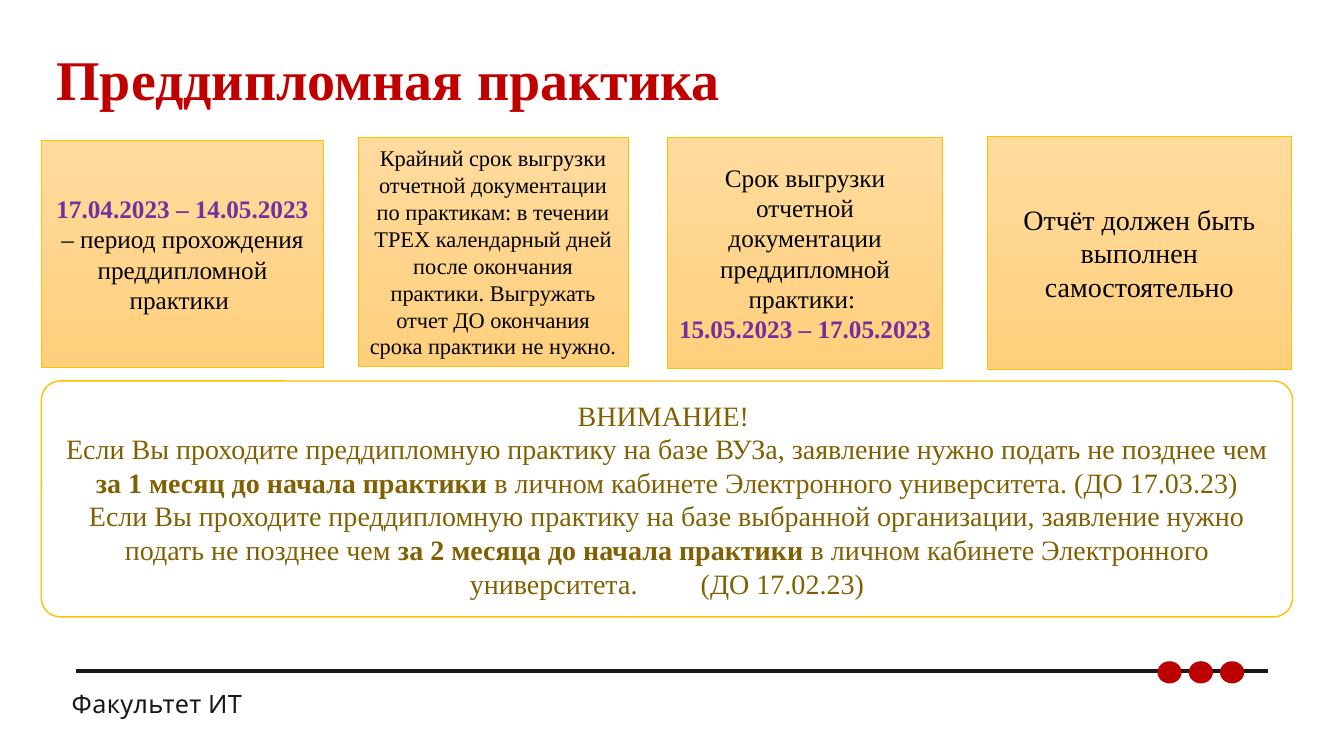
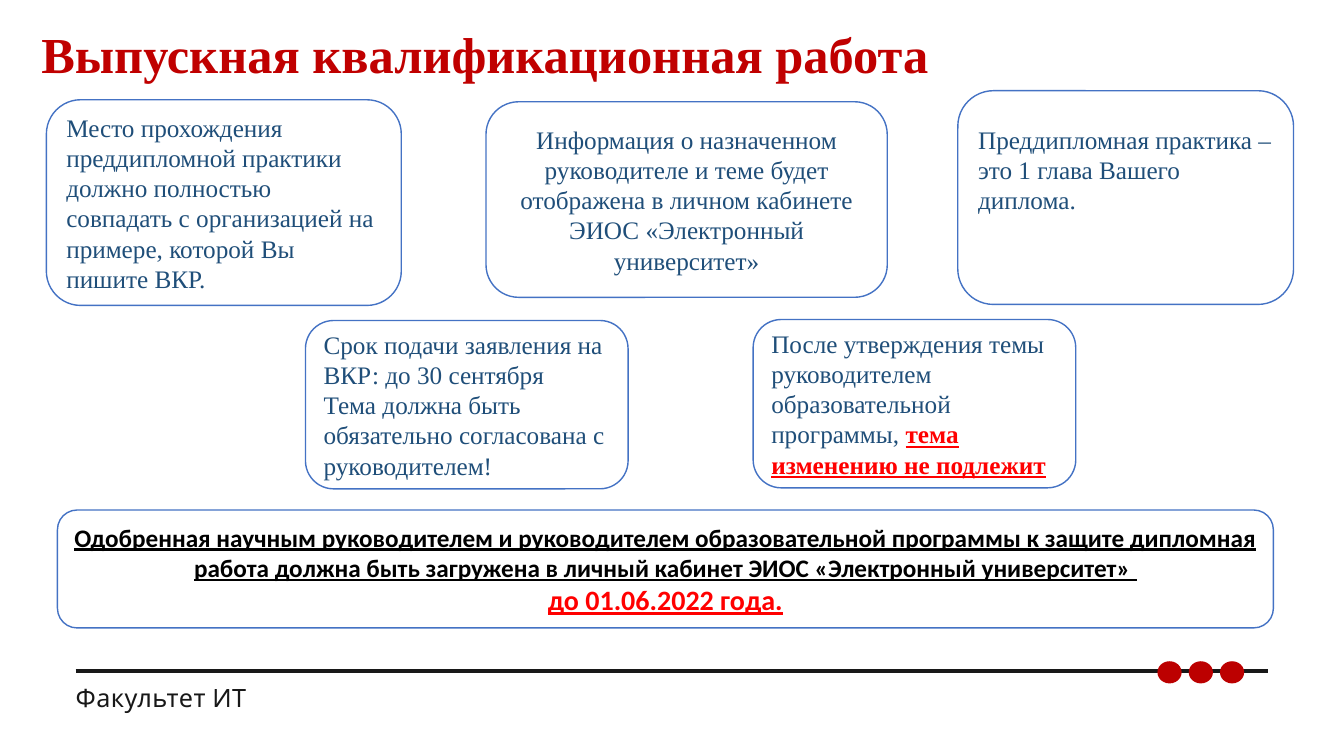
from pptx import Presentation
from pptx.dml.color import RGBColor
from pptx.enum import shapes, text
from pptx.oxml import parse_xml
from pptx.oxml.ns import nsdecls
from pptx.util import Inches, Pt

# Shared look
SERIF, SANS, FOOTER_FONT = "Times New Roman", "Calibri", "Karla"
TITLE_RED, DOT_RED, ALERT_RED = "C00000", "BC0000", "FF0000"
INK, BLACK, WHITE = "181818", "000000", "FFFFFF"
GOLD, BROWN, PURPLE = "FFC000", "806000", "7030A0"
BLUE, NAVY = "4472C4", "1F4E79"
CARD_GRADIENT = ("FFDB9E", "FFD07C")
LEFT, CENTER = text.PP_ALIGN.LEFT, text.PP_ALIGN.CENTER
MIDDLE, TOP = text.MSO_ANCHOR.MIDDLE, text.MSO_ANCHOR.TOP


def color(hex_code):
    return RGBColor.from_string(hex_code)


def add_span(para, words, size=18, font=SERIF, ink=BLACK, bold=False,
             underline=False, spacing=0):
    span = para.add_run()
    span.text = words
    span.font.size = Pt(size)
    span.font.name = font
    span.font.bold = bold
    span.font.underline = underline
    span.font.color.rgb = color(ink)
    if spacing:
        span.font._element.set("spc", str(round(spacing * 100)))


def write(frame, paragraphs, align=LEFT, **style):
    """Each paragraph is a list of spans: plain text or (text, style changes)."""
    frame.word_wrap = True
    for index, spans in enumerate(paragraphs):
        para = frame.add_paragraph() if index else frame.paragraphs[0]
        para.alignment = align
        for span in spans:
            words, changes = (span, {}) if isinstance(span, str) else span
            add_span(para, words, **{**style, **changes})


def add_title(page, words, place, size):
    title = page.shapes.title
    title.left, title.top, title.width, title.height = map(Inches, place)
    frame = title.text_frame
    frame.auto_size = text.MSO_AUTO_SIZE.NONE
    frame.vertical_anchor = MIDDLE
    write(frame, [[words]], size=size, ink=TITLE_RED, bold=True)
    frame.paragraphs[0].line_spacing = 0.9


def add_box(page, kind, place, line, line_width):
    box = page.shapes.add_shape(kind, *map(Inches, place))
    box.shadow.inherit = False
    box.line.color.rgb = color(line)
    box.line.width = Pt(line_width)
    box.text_frame.vertical_anchor = MIDDLE
    return box


def add_card(page, place, paragraphs, size=18):
    """Gold gradient rectangle with centred text."""
    card = add_box(page, shapes.MSO_SHAPE.RECTANGLE, place, GOLD, 0.5)
    card.fill.gradient()
    card.fill.gradient_angle = 270
    for stop, shade in zip(card.fill.gradient_stops, CARD_GRADIENT):
        stop.color.rgb = color(shade)
    write(card.text_frame, paragraphs, CENTER, size=size)


def add_panel(page, place, paragraphs, line=BLUE, align=LEFT, **style):
    """White rounded rectangle with a coloured outline."""
    panel = add_box(page, shapes.MSO_SHAPE.ROUNDED_RECTANGLE, place, line, 1)
    panel.fill.solid()
    panel.fill.fore_color.rgb = color(WHITE)
    write(panel.text_frame, paragraphs, align, **{"ink": NAVY, **style})
    return panel


def add_footer(page, left, top):
    label = page.shapes.add_textbox(*map(Inches, (left, top, 2.34, 0.24)))
    frame = label.text_frame
    frame.margin_left = frame.margin_right = 0
    frame.margin_top = frame.margin_bottom = 0
    write(frame, [["Факультет ИТ"]], font=FOOTER_FONT, ink=INK, spacing=0.3)

    rule = page.shapes.add_connector(
        shapes.MSO_CONNECTOR.STRAIGHT, *map(Inches, (0.75, 6.66, 12.58, 6.66)))
    rule.line.color.rgb = color(INK)
    rule.line.width = Pt(3.1)
    rule._element.spPr.append(parse_xml(f"<a:effectLst {nsdecls('a')}/>"))

    for index in range(3):
        place = (11.48 + 0.31 * index, 6.56, 0.24, 0.22)
        dot = page.shapes.add_shape(shapes.MSO_SHAPE.OVAL, *map(Inches, place))
        dot.shadow.inherit = False
        dot.fill.solid()
        dot.fill.fore_color.rgb = color(DOT_RED)
        dot.line.fill.background()


def build_practice(page):
    add_title(page, "Преддипломная практика", (0.46, 0.35, 11.5, 0.93), 40)
    add_footer(page, 0.71, 6.83)
    date = {"ink": PURPLE, "bold": True}
    bold = {"bold": True}

    # Deadline cards
    add_card(page, (0.41, 1.39, 2.8, 2.26), [[
        ("17.04.2023 – 14.05.2023 ", date),
        "– период прохождения преддипломной практики "]])
    add_card(page, (3.55, 1.36, 2.68, 2.28), [[
        "Крайний срок выгрузки отчетной документации по практикам: в течении "
        "ТРЕХ календарный дней после окончания практики. Выгружать отчет ДО "
        "окончания срока практики не нужно."]], size=16)
    add_card(page, (6.62, 1.36, 2.73, 2.3), [
        ["Срок выгрузки отчетной документации преддипломной практики:",
         (" ", {"spacing": 26})],
        [("15.05.2023 – 17.05.2023", date)]])
    add_card(page, (9.79, 1.35, 3.02, 2.31),
             [["Отчёт должен быть выполнен самостоятельно"]], size=20)

    # Application notice
    notice = add_panel(page, (0.41, 3.78, 12.41, 2.34), [
        ["ВНИМАНИЕ! "],
        ["Если Вы проходите преддипломную практику на базе ВУЗа, заявление "
         "нужно подать не позднее чем ",
         ("за 1 месяц до начала практики ", bold),
         "в личном кабинете Электронного университета. (ДО 17.03.23)"],
        ["Если Вы проходите преддипломную практику на базе выбранной "
         "организации, заявление нужно подать не позднее чем ",
         ("за 2 месяца до начала практики ", bold),
         "в личном кабинете Электронного университета.",
         (" ", {"spacing": 40}), "(ДО 17.02.23)"],
    ], line=GOLD, align=CENTER, size=20, ink=BROWN)
    notice.adjustments[0] = 0.08


def build_thesis(page):
    add_title(page, "Выпускная квалификационная работа",
              (0.31, 0.21, 12.33, 0.71), 36)
    add_footer(page, 0.75, 6.77)

    # Upper row
    add_panel(page, (0.46, 0.99, 3.52, 2.04), [[
        "Место прохождения преддипломной практики должно полностью совпадать "
        "с организацией на примере, которой Вы пишите ВКР."]])
    add_panel(page, (4.82, 1.01, 3.98, 1.94), [[
        "Информация о назначенном руководителе и теме будет отображена в "
        "личном кабинете ЭИОС «Электронный университет»"]], align=CENTER)
    chapter = add_panel(page, (9.5, 0.9, 3.33, 2.12), [[
        "Преддипломная практика – это 1 глава Вашего диплома."]])
    chapter.text_frame.vertical_anchor = TOP
    chapter.text_frame.margin_top = Inches(0.23)

    # Lower row
    add_panel(page, (3.03, 3.18, 3.2, 1.67), [
        ["Срок подачи заявления на ВКР: до 30 сентября"],
        ["Тема должна быть обязательно согласована с руководителем!"]])
    add_panel(page, (7.47, 3.17, 3.2, 1.67), [[
        "После утверждения темы руководителем образовательной программы, ",
        ("тема изменению не подлежит",
         {"ink": ALERT_RED, "bold": True, "underline": True})]])

    # Upload deadline
    add_panel(page, (0.57, 5.06, 12.06, 1.17), [
        ["Одобренная научным руководителем и руководителем образовательной "
         "программы к защите дипломная работа должна быть загружена в личный "
         "кабинет ЭИОС «Электронный университет»", (" ", {"spacing": 26})],
        [("до 01.06.2022 года.", {"size": 20, "ink": ALERT_RED})],
    ], align=CENTER, font=SANS, ink=BLACK, bold=True, underline=True)


def main():
    deck = Presentation()
    deck.slide_width, deck.slide_height = Inches(13.33), Inches(7.5)
    title_only = deck.slide_layouts[5]
    for build in (build_practice, build_thesis):
        build(deck.slides.add_slide(title_only))
    deck.save("out.pptx")


if __name__ == "__main__":
    main()
